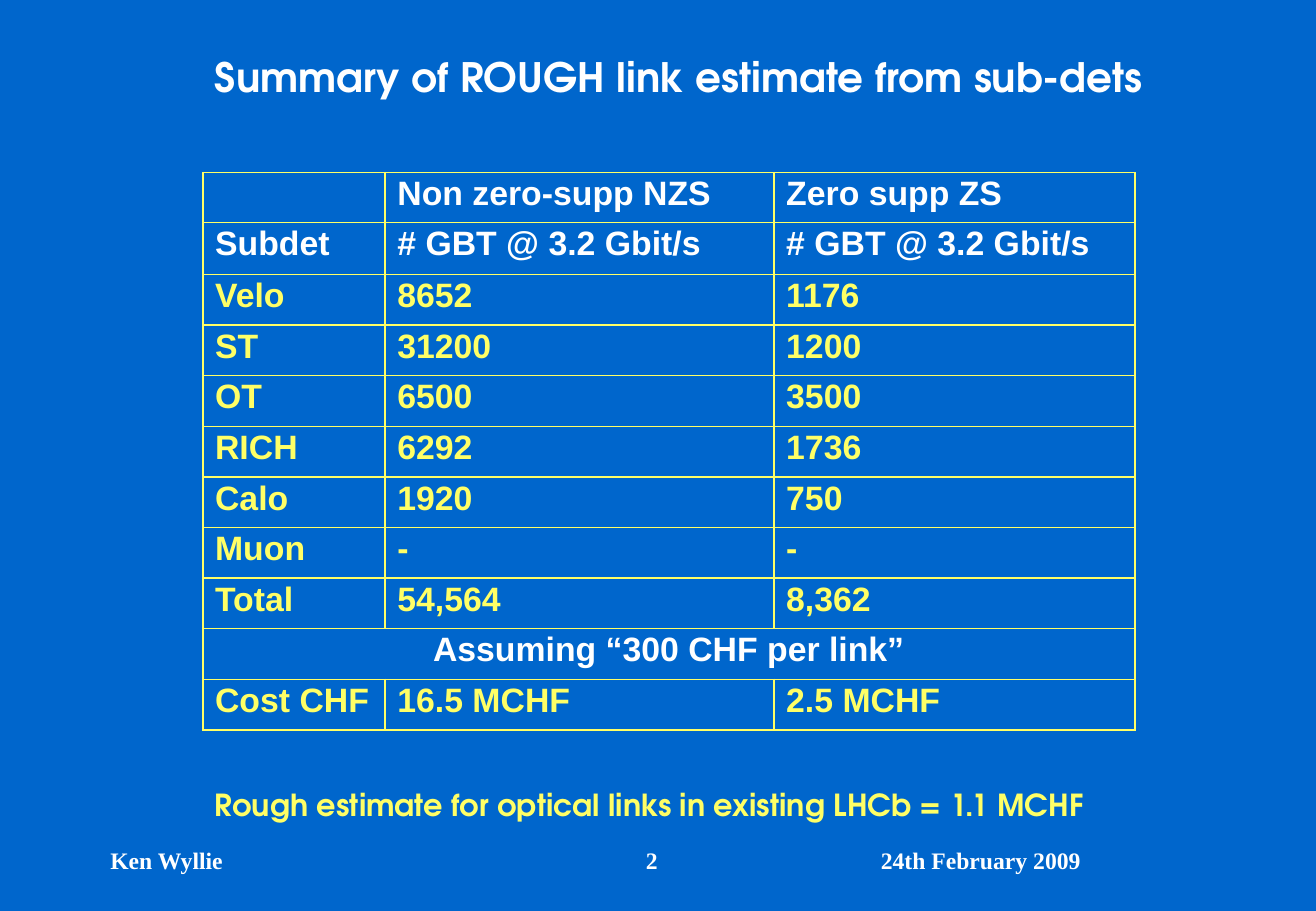
from lxml.etree import SubElement
from pptx import Presentation
from pptx.dml.color import RGBColor
from pptx.enum.text import MSO_ANCHOR, MSO_AUTO_SIZE, PP_ALIGN
from pptx.oxml.ns import qn
from pptx.util import Inches, Pt

BLUE = RGBColor(0x00, 0x66, 0xCC)
WHITE = RGBColor(0xFF, 0xFF, 0xFF)
YELLOW = RGBColor(0xFF, 0xFF, 0x66)

TITLE = "Summary of ROUGH link estimate from sub-dets"
ROWS = [
    ("", "Non zero-supp NZS", "Zero supp ZS"),
    ("Subdet", "# GBT @ 3.2 Gbit/s", "# GBT @ 3.2 Gbit/s"),
    ("Velo", "8652", "1176"),
    ("ST", "31200", "1200"),
    ("OT", "6500", "3500"),
    ("RICH", "6292", "1736"),
    ("Calo", "1920", "750"),
    ("Muon", "-", "-"),
    ("Total", "54,564", "8,362"),
    ("Assuming “300 CHF per link”",),
    ("Cost CHF", "16.5 MCHF", "2.5 MCHF"),
]
HEADS = 2
WIDTHS = (1.5, 3.2, 2.97)
LEFT, TOP, HEIGHT = 1.67, 1.42, 4.59
HEAD_HEIGHTS = (0.41, 0.43)

HEAD_FONT = dict(name="TeX Gyre Adventor", size=Pt(24), bold=True)
NOTE_FONT = dict(name="TeX Gyre Adventor", size=Pt(18), bold=True)
CELL_FONT = dict(name="Arial", size=Pt(20), bold=True)
FOOT_FONT = dict(name="Times New Roman", size=Pt(14), bold=True)

# text, box, font, colour, alignment, anchor
NOTES = [
    ("Ken Wyllie", (0.81, 6.83, 2.26, 0.5), FOOT_FONT, WHITE,
     PP_ALIGN.LEFT, MSO_ANCHOR.MIDDLE),
    ("2", (4.92, 6.83, 0.59, 0.5), FOOT_FONT, WHITE,
     PP_ALIGN.RIGHT, MSO_ANCHOR.MIDDLE),
    ("24th February 2009", (7.15, 6.83, 3.68, 0.5), FOOT_FONT, WHITE,
     PP_ALIGN.LEFT, MSO_ANCHOR.MIDDLE),
    ("Rough estimate for optical links in existing LHCb = 1.1 MCHF",
     (1.67, 6.42, 7.75, 0.4), NOTE_FONT, YELLOW,
     PP_ALIGN.LEFT, MSO_ANCHOR.TOP),
]


def write(frame, text, font, color, align=PP_ALIGN.LEFT, spacing=None):
    para = frame.paragraphs[0]
    para.alignment = align
    para.line_spacing = spacing
    run = para.add_run()
    run.text = text
    for key, value in font.items():
        setattr(run.font, key, value)
    run.font.color.rgb = color


def outline(cell):
    """Clear the cell's fill and draw its four borders."""
    cell.fill.background()
    props = cell._tc.get_or_add_tcPr()
    for spot, side in enumerate(("lnL", "lnR", "lnT", "lnB")):
        line = SubElement(props, qn(f"a:{side}"), w=str(Pt(1)))
        fill = SubElement(line, qn("a:solidFill"))
        SubElement(fill, qn("a:srgbClr"), val=str(YELLOW))
        props.insert(spot, line)


def add_title(slide):
    title = slide.shapes.title
    title.left, title.top = Inches(1.25), Inches(0.23)
    title.width, title.height = Inches(8.67), Inches(0.85)
    frame = title.text_frame
    frame.auto_size = MSO_AUTO_SIZE.NONE
    frame.vertical_anchor = MSO_ANCHOR.MIDDLE
    write(frame, TITLE, HEAD_FONT, WHITE, PP_ALIGN.CENTER, 0.9)


def add_links(slide):
    """Add the table of link counts and costs."""
    table = slide.shapes.add_table(
        len(ROWS), len(WIDTHS), Inches(LEFT), Inches(TOP),
        Inches(sum(WIDTHS)), Inches(HEIGHT)).table
    table.first_row = table.horz_banding = False
    for col, width in zip(table.columns, WIDTHS):
        col.width = Inches(width)
    rest = (HEIGHT - sum(HEAD_HEIGHTS)) / (len(ROWS) - HEADS)
    for r, texts in enumerate(ROWS):
        table.rows[r].height = Inches(HEAD_HEIGHTS[r] if r < HEADS else rest)
        whole = len(texts) == 1
        if whole:
            table.cell(r, 0).merge(table.cell(r, len(WIDTHS) - 1))
        color = WHITE if r < HEADS or whole else YELLOW
        align = PP_ALIGN.CENTER if whole else PP_ALIGN.LEFT
        for c in range(len(WIDTHS)):
            outline(table.cell(r, c))
        for c, text in enumerate(texts):
            if text:
                write(table.cell(r, c).text_frame, text, CELL_FONT,
                      color, align, 0.9)


def add_notes(slide):
    for text, box, font, color, align, anchor in NOTES:
        frame = slide.shapes.add_textbox(*map(Inches, box)).text_frame
        frame.word_wrap = True
        frame.vertical_anchor = anchor
        write(frame, text, font, color, align)


def main():
    deck = Presentation()
    deck.slide_width, deck.slide_height = Inches(10.83), Inches(7.5)
    slide = deck.slides.add_slide(deck.slide_layouts[5])
    fill = slide.background.fill
    fill.solid()
    fill.fore_color.rgb = BLUE
    add_title(slide)
    add_links(slide)
    add_notes(slide)
    deck.save("out.pptx")


if __name__ == "__main__":
    main()
